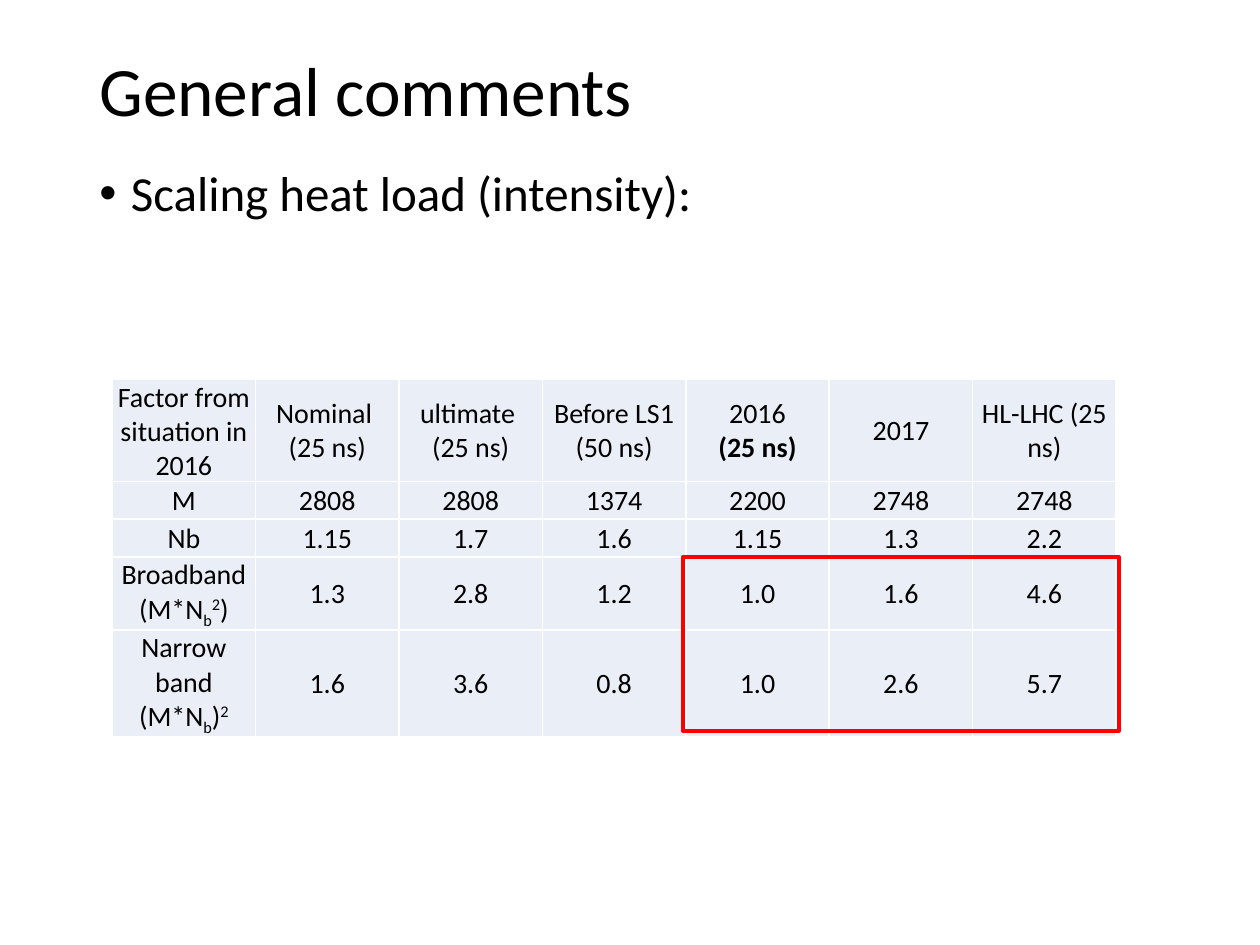
from copy import deepcopy

from lxml import etree
from pptx import Presentation
from pptx.dml.color import RGBColor
from pptx.enum.shapes import MSO_SHAPE
from pptx.enum.text import MSO_ANCHOR, PP_ALIGN
from pptx.oxml.ns import qn
from pptx.util import Inches, Pt

RECT = MSO_SHAPE.RECTANGLE
MIDDLE, TOP = MSO_ANCHOR.MIDDLE, MSO_ANCHOR.TOP
LEFT, CENTER = PP_ALIGN.LEFT, PP_ALIGN.CENTER

BLACK = RGBColor(0x00, 0x00, 0x00)
WHITE = RGBColor(0xFF, 0xFF, 0xFF)
PALE = RGBColor(0xEA, 0xEF, 0xF7)
RED = RGBColor(0xFF, 0x00, 0x00)

SUB, SUP, BOLD = {"base": -25}, {"base": 30}, {"bold": True}
ROWS = [
    ["Factor from situation in 2016", "Nominal \n(25 ns)", "ultimate \n(25 ns)",
     "Before LS1 (50 ns)", ["2016", [("(25 ns)", BOLD)]], "2017", "HL-LHC (25 ns)"],
    ["M", "2808", "2808", "1374", "2200", "2748", "2748"],
    ["Nb", "1.15", "1.7", "1.6", "1.15", "1.3", "2.2"],
    [[[("Broadband (M*N", {}), ("b", SUB), ("2", SUP), (")", {})]],
     "1.3", "2.8", "1.2", "1.0", "1.6", "4.6"],
    [[[("Narrow band (M*N", {}), ("b", SUB), (")", {}), ("2", SUP)]],
     "1.6", "3.6", "0.8", "1.0", "2.6", "5.7"],
]
HEIGHTS = [0.79, 0.3, 0.3, 0.32, 0.31]


def add_run(para, text, size, font, bold=False, base=0):
    run = para.add_run()
    run.text = text
    run.font.name, run.font.size, run.font.bold = font, Pt(size), bold
    run.font.color.rgb = BLACK
    if base:
        run.font._element.set("baseline", str(base * 1000))
    return run


def write(frame, text, size=16, font="Calibri", align=LEFT, line=None, before=None, bullet=None):
    paras = [text] if isinstance(text, str) else text
    for num, runs in enumerate(paras):
        para = frame.add_paragraph() if num else frame.paragraphs[0]
        para.alignment, para.line_spacing = align, line
        if before is not None:
            para.space_before = Pt(before)
        if bullet:
            props = para._p.get_or_add_pPr()
            props.set("marL", str(Inches(0.25)))
            props.set("indent", str(-Inches(0.25)))
            etree.SubElement(props, qn("a:buFont")).set("typeface", "Arial")
            etree.SubElement(props, qn("a:buChar")).set("char", bullet)
        for part, look in [(runs, {})] if isinstance(runs, str) else runs:
            for place, piece in enumerate(part.split("\n")):
                if place:
                    para.add_line_break()
                    para._p[-1].append(deepcopy(run.font._element))
                run = add_run(para, piece, size, font, **look)


class Deck:
    """Holds the style and the current slide."""

    def __init__(self, font="Calibri"):
        self.font = font
        self.show = Presentation()
        self.show.slide_width, self.show.slide_height = Inches(10), Inches(7.5)
        self.slide = self.show.slides.add_slide(self.show.slide_layouts[6])

    def text(self, box, text, anchor=TOP, **look):
        frame = self.slide.shapes.add_textbox(*map(Inches, box)).text_frame
        frame.word_wrap, frame.vertical_anchor = True, anchor
        write(frame, text, font=self.font, **look)

    def edge(self, cell, width=1):
        props = cell._tc.get_or_add_tcPr()
        for side in ("lnL", "lnR", "lnT", "lnB"):
            line = etree.SubElement(props, qn(f"a:{side}"), w=str(Pt(width)))
            fill = etree.SubElement(line, qn("a:solidFill"))
            etree.SubElement(fill, qn("a:srgbClr"), val=str(WHITE))

    def table(self, box, rows, heights):
        shape = self.slide.shapes.add_table(len(rows), len(rows[0]), *map(Inches, box))
        grid = shape.table
        grid.first_row = grid.horz_banding = False
        for col in grid.columns:
            col.width = Inches(box[2] / len(rows[0]))
        for row, height, texts in zip(grid.rows, heights, rows):
            row.height = Inches(height)
            for cell, text in zip(row.cells, texts):
                cell.margin_left = cell.margin_right = cell.margin_top = Inches(0.01)
                cell.margin_bottom = 0
                cell.vertical_anchor = MIDDLE
                self.edge(cell)
                cell.fill.solid()
                cell.fill.fore_color.rgb = PALE
                write(cell.text_frame, text, font=self.font, align=CENTER)

    def frame(self, box, color, width):
        shape = self.slide.shapes.add_shape(RECT, *map(Inches, box))
        shape.shadow.inherit = False
        shape.fill.background()
        shape.line.color.rgb, shape.line.width = color, Pt(width)

    def save(self):
        self.show.save("out.pptx")


def main():
    deck = Deck()
    deck.text((0.69, 0.4, 8.62, 0.69), "General comments", anchor=MIDDLE, size=39.6, line=0.9)
    deck.text((0.69, 1.29, 8.62, 5.46), "Scaling heat load (intensity):",
              size=28, line=0.9, before=10, bullet="•")
    deck.table((0.89, 3.01, 7.97, sum(HEIGHTS)), ROWS, HEIGHTS)
    deck.frame((5.42, 4.42, 3.46, 1.38), RED, 2.25)
    deck.save()


if __name__ == "__main__":
    main()
